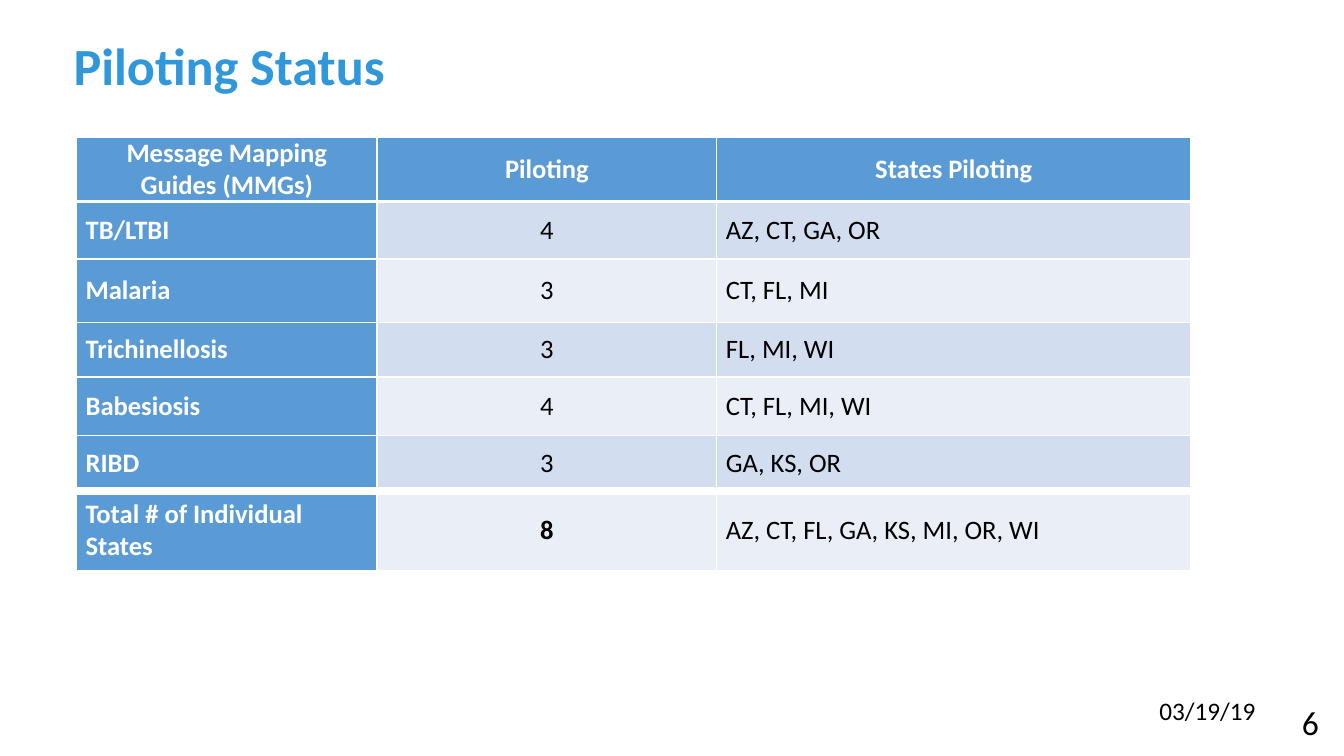
from lxml import etree
from pptx import Presentation
from pptx import util as u
from pptx.dml.color import RGBColor
from pptx.enum import text
from pptx.oxml import ns

FONT = "Calibri"
TITLE_BLUE = RGBColor(0x2F, 0x97, 0xDA)
HEADER_BLUE = RGBColor(0x5B, 0x9B, 0xD5)
BAND_DARK = RGBColor(0xD2, 0xDE, 0xEF)
BAND_LIGHT = RGBColor(0xEA, 0xEF, 0xF7)
WHITE = RGBColor(0xFF, 0xFF, 0xFF)
BLACK = RGBColor(0, 0, 0)

LEFT = text.PP_ALIGN.LEFT
CENTER = text.PP_ALIGN.CENTER
RIGHT = text.PP_ALIGN.RIGHT

COLUMN_WIDTHS = [2.98, 3.37, 4.7]
ROW_HEIGHTS = [0.62, 0.57, 0.63, 0.54, 0.58, 0.55, 0.79]
PILOTING_ROWS = [
    ("Message Mapping Guides (MMGs)", "Piloting", "States Piloting"),
    ("TB/LTBI", "4", "AZ, CT, GA, OR"),
    ("Malaria", "3", "CT, FL, MI"),
    ("Trichinellosis", "3", "FL, MI, WI"),
    ("Babesiosis", "4", "CT, FL, MI, WI"),
    ("RIBD", "3", "GA, KS, OR"),
    ("Total # of Individual States", "8", "AZ, CT, FL, GA, KS, MI, OR, WI"),
]
LAST_ROW = len(PILOTING_ROWS) - 1


def write_text(frame, words, size, color=BLACK, bold=False, align=LEFT, spacing=None):
    para = frame.paragraphs[0]
    para.alignment = align
    if spacing:
        para.line_spacing = u.Pt(spacing)
    span = para.add_run()
    span.text = words
    span.font.name = FONT
    span.font.size = u.Pt(size)
    span.font.bold = bold
    span.font.color.rgb = color


def set_borders(cell, top, bottom):
    properties = cell._tc.get_or_add_tcPr()
    widths = {"a:lnL": 1, "a:lnR": 1, "a:lnT": top, "a:lnB": bottom}
    for position, (tag, width) in enumerate(widths.items()):
        line = etree.Element(ns.qn(tag), w=str(u.Pt(width)))
        fill = etree.SubElement(line, ns.qn("a:solidFill"))
        etree.SubElement(fill, ns.qn("a:srgbClr"), val=str(WHITE))
        properties.insert(position, line)


def add_title(page, left, top, width, height):
    title = page.shapes.title
    title.left, title.top = u.Inches(left), u.Inches(top)
    title.width, title.height = u.Inches(width), u.Inches(height)
    title.text_frame.vertical_anchor = text.MSO_ANCHOR.BOTTOM
    write_text(title.text_frame, "Piloting Status", 37.3, TITLE_BLUE,
               bold=True, spacing=40)


def format_cell(cell, words, row, column):
    heading = row == 0 or column == 0
    total = row == LAST_ROW and column == 1
    band = BAND_DARK if row % 2 else BAND_LIGHT
    cell.fill.solid()
    cell.fill.fore_color.rgb = HEADER_BLUE if heading else band
    cell.vertical_anchor = text.MSO_ANCHOR.MIDDLE
    cell.margin_left = cell.margin_right = u.Inches(0.09)
    cell.margin_top = cell.margin_bottom = 0
    edge_widths = {1: 3, LAST_ROW: 6}
    set_borders(cell, edge_widths.get(row, 1), edge_widths.get(row + 1, 1))
    write_text(cell.text_frame, words, 19, WHITE if heading else BLACK,
               bold=heading or total,
               align=CENTER if row == 0 or column == 1 else LEFT)


def add_piloting_table(page, left, top, width, height):
    table = page.shapes.add_table(
        len(ROW_HEIGHTS), len(COLUMN_WIDTHS),
        u.Inches(left), u.Inches(top), u.Inches(width), u.Inches(height)).table
    for column, column_width in zip(table.columns, COLUMN_WIDTHS):
        column.width = u.Inches(column_width)
    for row, row_height in zip(table.rows, ROW_HEIGHTS):
        row.height = u.Inches(row_height)
    for row, entries in enumerate(PILOTING_ROWS):
        for column, words in enumerate(entries):
            format_cell(table.cell(row, column), words, row, column)


def add_footer_text(page, words, left, top, width, height, **style):
    box = page.shapes.add_textbox(
        u.Inches(left), u.Inches(top), u.Inches(width), u.Inches(height))
    box.text_frame.word_wrap = True
    write_text(box.text_frame, words, **style)


def main():
    deck = Presentation()
    deck.slide_width, deck.slide_height = u.Inches(13.33), u.Inches(7.5)
    page = deck.slides.add_slide(deck.slide_layouts.get_by_name("Title Only"))
    add_title(page, 0.63, 0.29, 12, 0.71)
    add_piloting_table(page, 0.76, 1.36, sum(COLUMN_WIDTHS), sum(ROW_HEIGHTS))
    add_footer_text(page, "6", 11.92, 6.91, 1.26, 0.5, size=24, align=RIGHT)
    add_footer_text(page, "03/19/19", 11.4, 6.85, 1.22, 0.4, size=18)
    deck.save("out.pptx")


if __name__ == "__main__":
    main()
